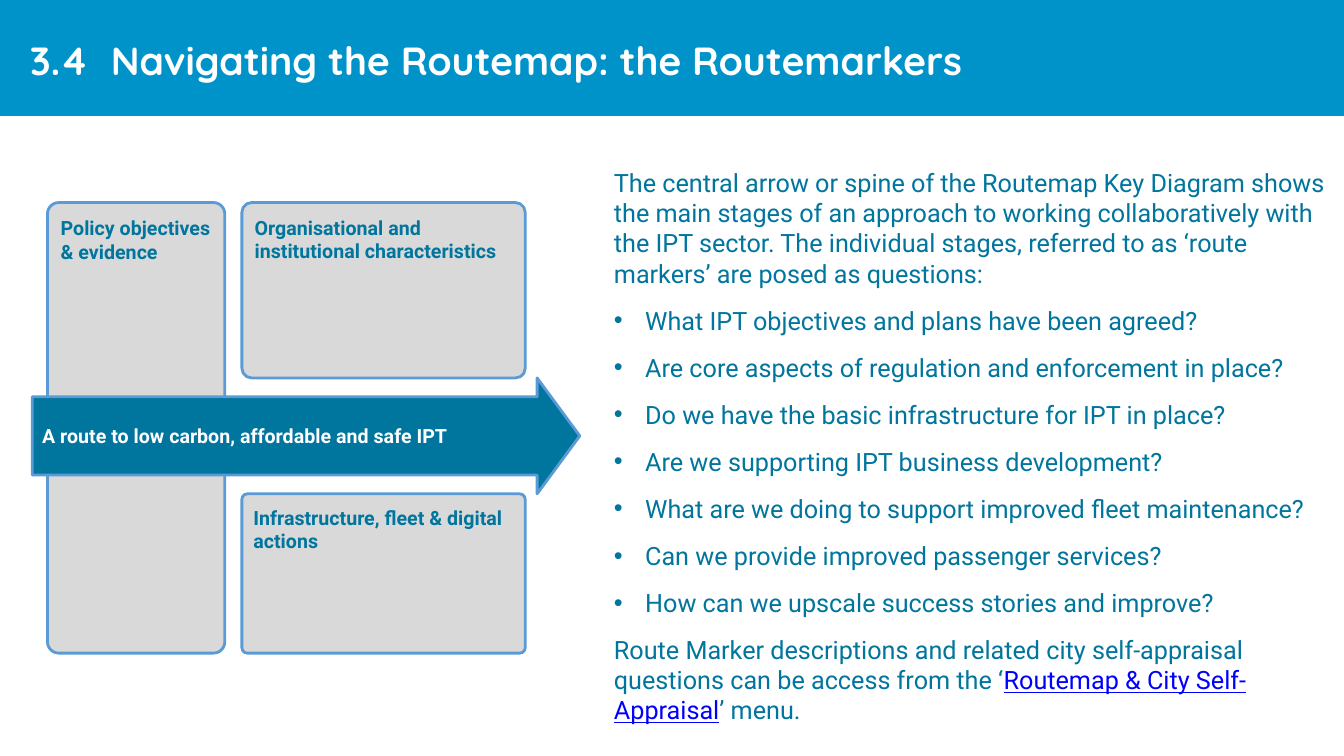
from lxml.etree import SubElement
from pptx import Presentation
from pptx.dml.color import RGBColor
from pptx.enum.shapes import MSO_SHAPE
from pptx.enum.text import MSO_ANCHOR, MSO_AUTO_SIZE, PP_ALIGN
from pptx.oxml.ns import qn
from pptx.util import Inches, Pt

WIDTH, HEIGHT = Inches(13.33), Inches(7.5)
INSET = Inches(0.1)
BULLET_INDENT = Inches(0.31)

WHITE = RGBColor(0xFF, 0xFF, 0xFF)
BAND_BLUE = RGBColor(0x00, 0x93, 0xCA)
TEAL = RGBColor(0x00, 0x75, 0x9E)
OUTLINE_BLUE = RGBColor(0x5B, 0x9B, 0xD5)
STAGE_GREY = RGBColor(0xD9, 0xD9, 0xD9)
LINK_BLUE = RGBColor(0x00, 0x00, 0xFF)

TITLE_FORMAT = {"name": "Quicksand", "size": Pt(28), "bold": True}
LABEL_FORMAT = {"name": "Roboto", "size": Pt(14), "bold": True}
BODY_FORMAT = {"name": "Roboto", "size": Pt(18), "bold": False}

# Places are left, top, width, height in percent of the slide's size.
STAGE_TOP = 26.8
ACTIONS_LEFT, ACTIONS_WIDTH = 18, 21.08
BAND_PLACE = (0, 0, 100, 15.33)
TITLE_PLACE = (2.25, 3.73, 97.75, 8.53)
POLICY_PLACE = (3.53, STAGE_TOP, 13.2, 59.6)
ORGANISATION_PLACE = (ACTIONS_LEFT, STAGE_TOP, ACTIONS_WIDTH, 23.2)
INFRASTRUCTURE_PLACE = (ACTIONS_LEFT, 65.33, ACTIONS_WIDTH, 21.07)
ARROW_PLACE = (2.4, 50, 40.74, 15.33)
PANEL_PLACE = (44.94, 20.8, 54.39, 71.6)

INTRODUCTION = (
    "The central arrow or spine of the Routemap Key Diagram shows the main "
    "stages of an approach to working collaboratively with the IPT sector. "
    "The individual stages, referred to as ‘route markers’ are posed as questions:"
)
QUESTIONS = [
    "What IPT objectives and plans have been agreed?",
    "Are core aspects of regulation and enforcement in place?",
    "Do we have the basic infrastructure for IPT in place?",
    "Are we supporting IPT business development?",
    "What are we doing to support improved fleet maintenance?",
    "Can we provide improved passenger services?",
    "How can we upscale success stories and improve?",
]
CLOSING = (
    "Route Marker descriptions and related city self-appraisal questions "
    "can be access from the ‘"
)


def slide_place(place):
    """Turn percentages of the slide into lengths."""
    sides = (WIDTH, HEIGHT, WIDTH, HEIGHT)
    return [round(side * share / 100) for side, share in zip(sides, place)]


def set_frame(frame, insets, anchor):
    frame.word_wrap = True
    frame.auto_size = MSO_AUTO_SIZE.NONE
    frame.vertical_anchor = anchor
    for side, inset in zip(("left", "top", "right", "bottom"), insets):
        setattr(frame, f"margin_{side}", inset)


def add_block(slide, kind, place, fill, outlined=False, adjustments=(), anchor=MSO_ANCHOR.TOP):
    block = slide.shapes.add_shape(kind, *slide_place(place))
    block.shadow.inherit = False
    block.fill.solid()
    block.fill.fore_color.rgb = fill
    if outlined:
        block.line.color.rgb = OUTLINE_BLUE
        block.line.width = Pt(2)
    else:
        block.line.fill.background()
    for index, value in enumerate(adjustments):
        block.adjustments[index] = value
    set_frame(block.text_frame, [INSET] * 4, anchor)
    return block


def add_span(para, text, formats, color, underline=None):
    span = para.add_run()
    span.text = text
    for name, value in formats.items():
        setattr(span.font, name, value)
    span.font.color.rgb = color
    span.font.underline = underline


def write_lines(block, lines, color):
    frame = block.text_frame
    for index, line in enumerate(lines):
        para = frame.add_paragraph() if index else frame.paragraphs[0]
        para.alignment = PP_ALIGN.LEFT
        add_span(para, line, LABEL_FORMAT, color)


def add_stage(slide, place, rounding, lines):
    box = add_block(slide, MSO_SHAPE.ROUNDED_RECTANGLE, place, STAGE_GREY, True, [rounding])
    write_lines(box, lines, TEAL)


def add_title(slide):
    """Put the title on its band, with a tab after the section number."""
    add_block(slide, MSO_SHAPE.RECTANGLE, BAND_PLACE, BAND_BLUE)
    title = slide.shapes.title
    slide.shapes._spTree.append(title._element)
    title.left, title.top, title.width, title.height = slide_place(TITLE_PLACE)
    insets = (0, Inches(0.08), Inches(0.16), Inches(0.08))
    set_frame(title.text_frame, insets, MSO_ANCHOR.TOP)
    para = title.text_frame.paragraphs[0]
    para.alignment = PP_ALIGN.LEFT
    para.line_spacing = 1.0
    para.space_before = Pt(0)
    tabs = SubElement(para._p.get_or_add_pPr(), qn("a:tabLst"))
    SubElement(tabs, qn("a:tab"), pos=str(Inches(0.8)), algn="l")
    add_span(para, "3.4\tNavigating the Routemap: the Routemarkers", TITLE_FORMAT, WHITE)


def add_bullet(para):
    properties = para._p.get_or_add_pPr()
    properties.set("marL", str(BULLET_INDENT))
    properties.set("indent", str(-BULLET_INDENT))
    SubElement(properties, qn("a:buFont"), typeface="Arial")
    SubElement(properties, qn("a:buChar"), char="•")


def add_question_panel(slide):
    panel = add_block(slide, MSO_SHAPE.RECTANGLE, PANEL_PLACE, WHITE)
    fill_color = panel._element.spPr.find(qn("a:solidFill"))[0]
    SubElement(fill_color, qn("a:alpha"), val="76000")
    frame = panel.text_frame
    for index, text in enumerate([INTRODUCTION, *QUESTIONS, CLOSING]):
        para = frame.add_paragraph() if index else frame.paragraphs[0]
        para.alignment = PP_ALIGN.LEFT
        para.space_after = Pt(12)
        if text in QUESTIONS:
            add_bullet(para)
        add_span(para, text, BODY_FORMAT, TEAL)
    add_span(para, "Routemap & City Self-Appraisal", BODY_FORMAT, LINK_BLUE, True)
    add_span(para, "’ menu.", BODY_FORMAT, TEAL)


def add_route_arrow(slide):
    arrow = add_block(slide, MSO_SHAPE.RIGHT_ARROW, ARROW_PLACE, TEAL, True,
                      [0.676, 0.368], MSO_ANCHOR.MIDDLE)
    write_lines(arrow, ["A route to low carbon, affordable and safe IPT"], WHITE)


def main():
    deck = Presentation()
    deck.slide_width, deck.slide_height = WIDTH, HEIGHT
    slide = deck.slides.add_slide(deck.slide_layouts.get_by_name("Title Only"))
    add_stage(slide, POLICY_PLACE, 0.064, ["Policy objectives & evidence"])
    add_title(slide)
    add_question_panel(slide)
    add_route_arrow(slide)
    add_stage(slide, ORGANISATION_PLACE, 0.055,
              ["Organisational and", "institutional characteristics"])
    add_stage(slide, INFRASTRUCTURE_PLACE, 0.034,
              ["Infrastructure, fleet & digital actions"])
    deck.save("out.pptx")


if __name__ == "__main__":
    main()
